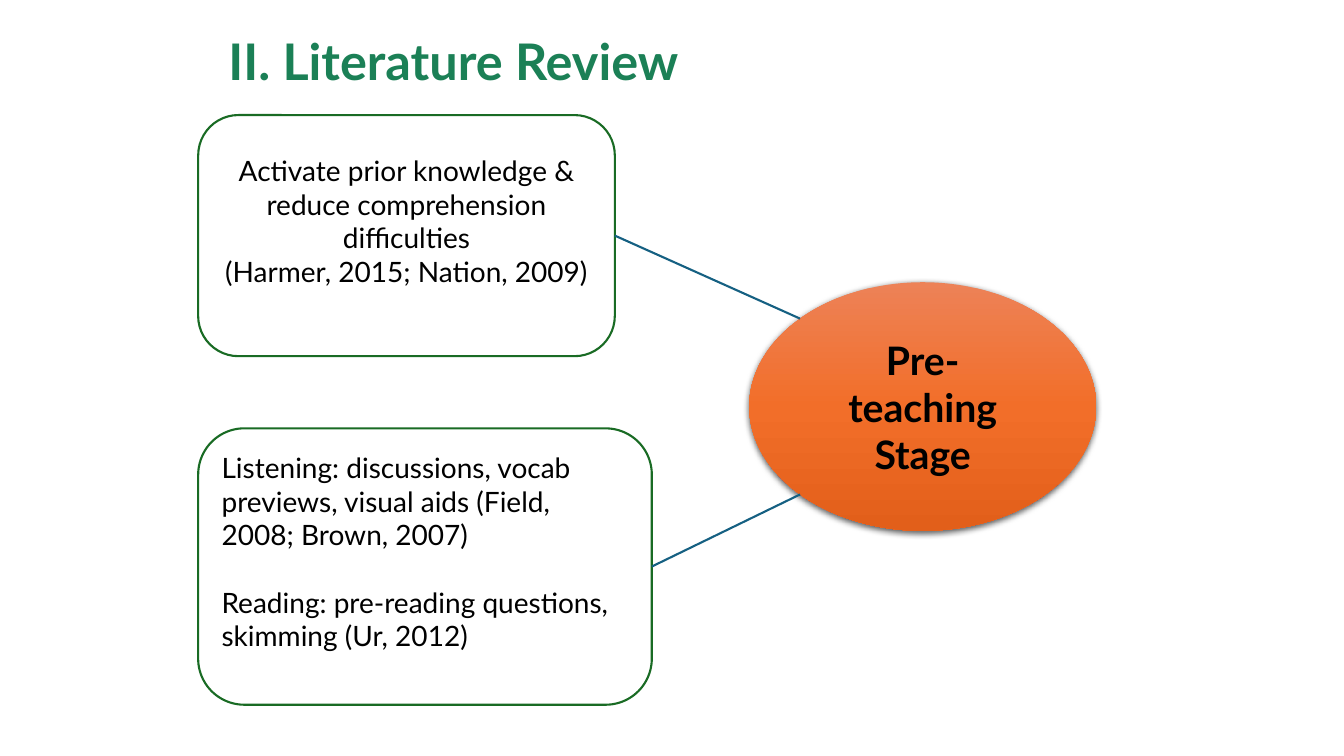
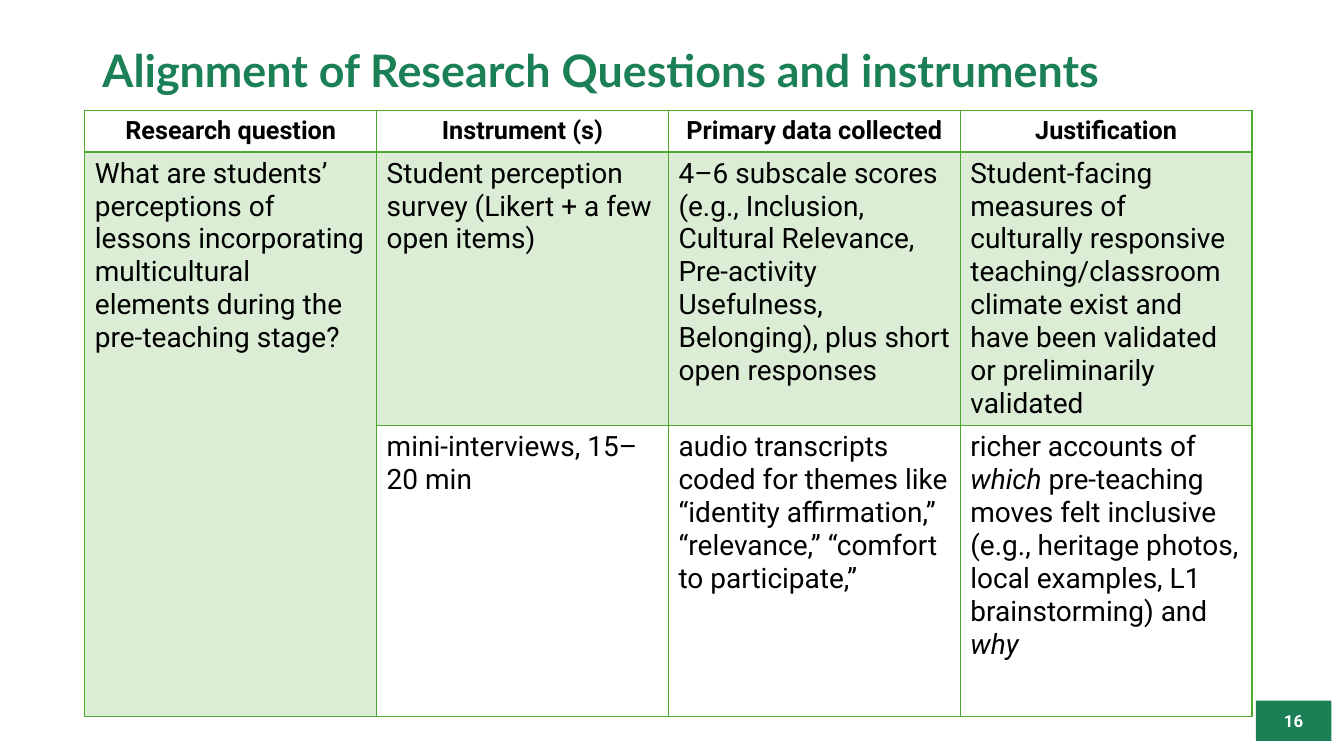
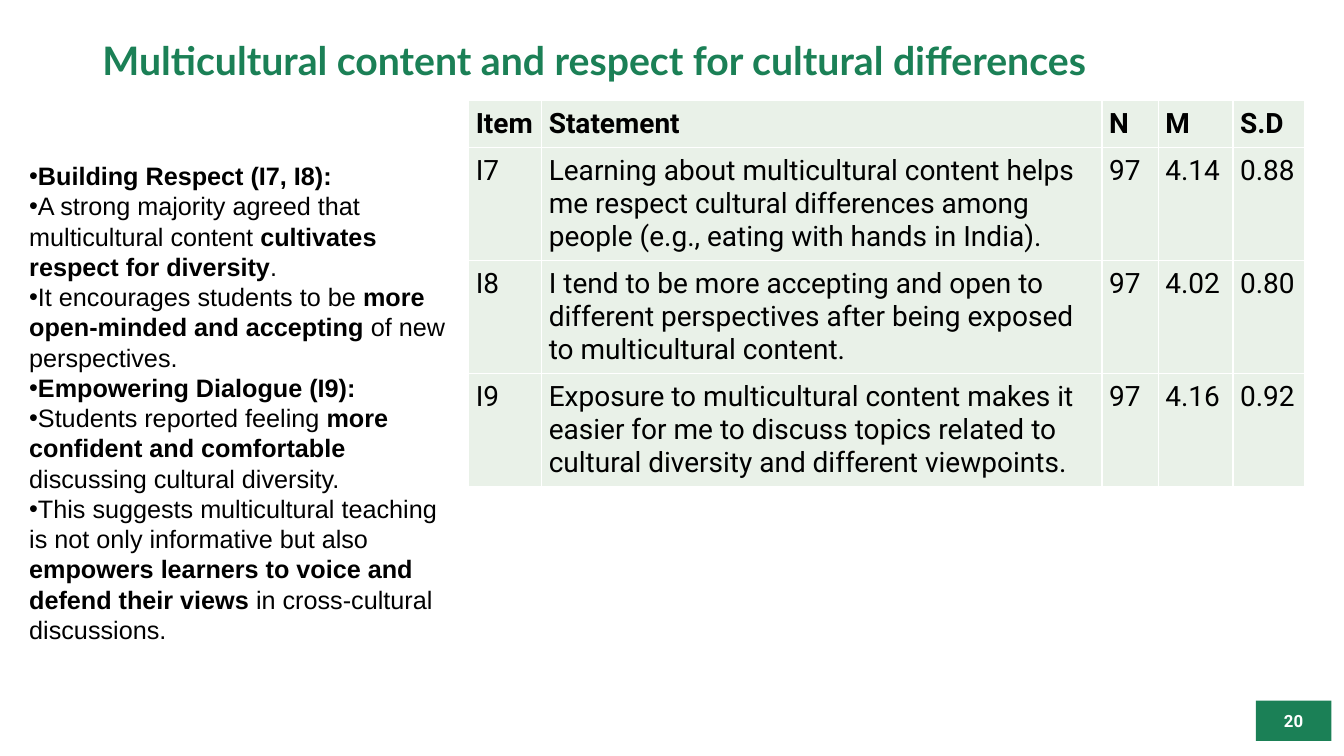
from copy import deepcopy
from math import sqrt

from lxml.etree import SubElement
from pptx import Presentation
from pptx.dml.color import RGBColor
from pptx.enum.shapes import MSO_CONNECTOR, MSO_SHAPE
from pptx.enum.text import MSO_ANCHOR, MSO_AUTO_SIZE, PP_ALIGN
from pptx.oxml.ns import qn
from pptx.util import Emu, Inches, Pt

GREEN = RGBColor(0x1B, 0x80, 0x56)
OUTLINE = RGBColor(0x19, 0x6B, 0x24)
LINK = RGBColor(0x15, 0x60, 0x82)
GRID_GREEN = RGBColor(0x4E, 0xA7, 0x2E)
LIGHT_GREEN = RGBColor(0xDC, 0xED, 0xD5)
PALE = RGBColor(0xE9, 0xF1, 0xE8)
BLACK = RGBColor(0, 0, 0)
WHITE = RGBColor(0xFF, 0xFF, 0xFF)
STAGE_STOPS = [(0, RGBColor(0xED, 0x82, 0x57)),
               (0.5, RGBColor(0xF2, 0x6E, 0x29)),
               (1, RGBColor(0xE2, 0x5F, 0x1A))]

SLIDE_W, SLIDE_H = Inches(13.333), Inches(7.5)
COL, ROW = SLIDE_W / 160, SLIDE_H / 90

TITLE = {"name": "Lato", "bold": True, "color": GREEN}
NOTE = {"name": "Lato", "size": Pt(20), "color": BLACK}
STAGE = {"name": "Lato", "size": Pt(28), "bold": True, "color": BLACK}
NUMBER = {"name": "Roboto", "size": Pt(12), "bold": True, "color": WHITE}
CELL = {"name": "Roboto", "size": Pt(20), "bold": False, "color": BLACK}
FINDING = {"name": "Arial", "size": Pt(18), "bold": False, "color": BLACK}

ALIGNMENT_ROWS = [
    ["Research question", "Instrument (s)", "Primary data collected",
     "Justification"],
    ["What are students’ perceptions of lessons incorporating multicultural "
     "elements during the pre-teaching stage?",
     "Student perception survey (Likert + a few open items)",
     "4–6 subscale scores (e.g., Inclusion, Cultural Relevance, Pre-activity "
     "Usefulness, Belonging), plus short open responses",
     "Student-facing measures of culturally responsive teaching/classroom "
     "climate exist and have been validated or preliminarily validated"],
    ["", "mini-interviews, 15–20 min",
     "audio transcripts coded for themes like “identity affirmation,” "
     "“relevance,” “comfort to participate,”",
     "richer accounts of |which| pre-teaching moves felt inclusive (e.g., "
     "heritage photos, local examples, L1 brainstorming) and |why|"],
]
ITEM_ROWS = [
    ["Item", "Statement", "N", "M", "S.D"],
    ["I7", "Learning about multicultural content helps me respect cultural "
     "differences among people (e.g., eating with hands in India).",
     "97", "4.14", "0.88"],
    ["I8", "I tend to be more accepting and open to different perspectives "
     "after being exposed to multicultural content.", "97", "4.02", "0.80"],
    ["I9", "Exposure to multicultural content makes it easier for me to "
     "discuss topics related to cultural diversity and different viewpoints.",
     "97", "4.16", "0.92"],
]
FINDINGS = [
    "|Building Respect (I7, I8):|",
    "A strong majority agreed that multicultural content |cultivates respect "
    "for diversity|.",
    "It encourages students to be |more open-minded and accepting| of new "
    "perspectives.",
    "|Empowering Dialogue (I9):|",
    "Students reported feeling |more confident and comfortable| discussing "
    "cultural diversity.",
    "This suggests multicultural teaching is not only informative but also "
    "|empowers learners to voice and defend their views| in cross-cultural "
    "discussions.",
]


def at(left, top, width, height):
    """Turn grid columns and rows into slide lengths."""
    return [Emu(round(n * unit))
            for n, unit in zip((left, top, width, height), (COL, ROW) * 2)]


def format_font(font, fmt):
    for key, value in fmt.items():
        if key == "color":
            font.color.rgb = value
        else:
            setattr(font, key, value)


def add_bullet(p):
    pPr = p._p.get_or_add_pPr()
    pPr.set("marL", "0")
    pPr.set("indent", "0")
    SubElement(pPr, qn("a:buFont")).set("typeface", "Arial")
    SubElement(pPr, qn("a:buChar")).set("char", "•")


def write(tf, lines, fmt, align=PP_ALIGN.LEFT, emphasis="bold", gap=None,
          bullets=False):
    """Write one paragraph a line; text between bars takes the emphasis."""
    for i, line in enumerate(lines):
        p = tf.add_paragraph() if i else tf.paragraphs[0]
        p.alignment = align
        if gap and i:
            p.space_before = gap
        if bullets:
            add_bullet(p)
        for j, part in enumerate(line.split("|")):
            if part:
                r = p.add_run()
                r.text = part
                format_font(r.font, {**fmt, emphasis: True} if j % 2 else fmt)


def set_frame(tf, **settings):
    settings = {"word_wrap": True, "auto_size": MSO_AUTO_SIZE.NONE,
                "vertical_anchor": MSO_ANCHOR.MIDDLE, **settings}
    for key, value in settings.items():
        setattr(tf, key, value)


def add_slide(prs, title, size, place, number=None):
    s = prs.slides.add_slide(prs.slide_layouts[5])
    sp = s.shapes.title
    sp.left, sp.top, sp.width, sp.height = at(*place)
    set_frame(sp.text_frame)
    write(sp.text_frame, [title], {**TITLE, "size": size}, PP_ALIGN.JUSTIFY)
    sp.text_frame.paragraphs[0].line_spacing = 0.9
    if number:
        badge = add_box(s, MSO_SHAPE.RECTANGLE, (149.5, 83.4, 9, 4.8), GREEN)
        write(badge.text_frame, [number], NUMBER, PP_ALIGN.CENTER)
    return s


def add_box(s, kind, place, fill, outline=None, **frame):
    sp = s.shapes.add_shape(kind, *at(*place))
    sp.shadow.inherit = False
    sp.fill.solid()
    sp.fill.fore_color.rgb = fill
    if outline:
        sp.line.color.rgb = outline
        sp.line.width = Pt(1.5)
    else:
        sp.line.fill.background()
    set_frame(sp.text_frame, **frame)
    return sp


def add_note(s, place, lines, **style):
    sp = add_box(s, MSO_SHAPE.ROUNDED_RECTANGLE, place, WHITE, OUTLINE,
                 margin_bottom=Pt(25))
    write(sp.text_frame, lines, NOTE, **style)
    return sp


def add_stage(s, place, text):
    """Add an ellipse with a three-stop gradient and a soft shadow below."""
    sp = add_box(s, MSO_SHAPE.OVAL, place, WHITE,
                 margin_left=Inches(0.2), margin_right=Inches(0.2))
    sp.fill.gradient()
    sp.fill.gradient_angle = 270
    spPr = sp._element.spPr
    stops = spPr.find(".//" + qn("a:gsLst"))
    stops.insert(1, deepcopy(stops[0]))
    for stop, (position, color) in zip(sp.fill.gradient_stops, STAGE_STOPS):
        stop.position = position
        stop.color.rgb = color
    shadow = SubElement(spPr.find(qn("a:effectLst")), qn("a:outerShdw"),
                        blurRad=str(Pt(4.5)), dist=str(Pt(1.5)),
                        dir="5400000", algn="ctr", rotWithShape="0")
    color = SubElement(shadow, qn("a:srgbClr"), val="000000")
    SubElement(color, qn("a:alpha"), val="63000")
    write(sp.text_frame, [text], STAGE, PP_ALIGN.CENTER)
    return sp


def link_to_stage(s, note, stage, side):
    """Join a note to the ellipse's upper (-1) or lower (1) left diagonal."""
    x = stage.left + stage.width / 2 * (1 - 1 / sqrt(2))
    y = stage.top + stage.height / 2 * (1 + side / sqrt(2))
    line = s.shapes.add_connector(MSO_CONNECTOR.STRAIGHT, 0, 0,
                                  Emu(round(x)), Emu(round(y)))
    line.begin_connect(note, 3)
    line.line.color.rgb = LINK
    line.line.width = Pt(1.5)
    SubElement(line._element.spPr, qn("a:effectLst"))


def set_borders(cell, color, widths):
    """Draw the left, right, top and bottom borders of a cell."""
    tcPr = cell._tc.get_or_add_tcPr()
    for side, width in zip("LRTB", widths):
        ln = SubElement(tcPr, qn("a:ln" + side), w=str(Pt(width)))
        fill = SubElement(ln, qn("a:solidFill"))
        SubElement(fill, qn("a:srgbClr"), val=str(color))


def add_table(s, corner, cols, rows, texts, fills, border, header,
              header_align=PP_ALIGN.LEFT, rule=1, margin=None):
    """Add a table; fills gives a colour per row, rule the header's line."""
    place = at(*corner, sum(cols), sum(rows))
    table = s.shapes.add_table(len(rows), len(cols), *place).table
    table.first_row = table.horz_banding = False
    for column, width in zip(table.columns, cols):
        column.width = Emu(round(width * COL))
    for i, (row, height) in enumerate(zip(table.rows, rows)):
        row.height = Emu(round(height * ROW))
        for cell, text in zip(row.cells, texts[i]):
            set_borders(cell, border, (1, 1, rule if i == 1 else 1,
                                       1 if i else rule))
            cell.fill.solid()
            cell.fill.fore_color.rgb = fills[i]
            if margin:
                for side in ("left", "right", "top", "bottom"):
                    setattr(cell, "margin_" + side, margin)
            write(cell.text_frame, [text], CELL if i else header,
                  PP_ALIGN.LEFT if i else header_align, emphasis="italic")
    return table


def build_review(prs):
    s = add_slide(prs, "II. Literature Review", Pt(36), (26, 0.2, 108, 15))
    stage = add_stage(s, (89.2, 33.6, 41.3, 29.6), "Pre-teaching Stage")
    purpose = add_note(
        s, (23.6, 13.7, 49.6, 28.7),
        ["Activate prior knowledge & reduce comprehension difficulties",
         "(Harmer, 2015; Nation, 2009)"], align=PP_ALIGN.CENTER)
    skills = add_note(
        s, (23.6, 51, 54, 32.9),
        ["Listening: discussions, vocab previews, visual aids (Field, 2008; "
         "Brown, 2007)",
         "Reading: pre-reading questions, skimming (Ur, 2012)"], gap=Pt(24))
    link_to_stage(s, purpose, stage, -1)
    link_to_stage(s, skills, stage, 1)


def build_alignment(prs):
    s = add_slide(prs, "Alignment of Research Questions and instruments",
                  Pt(32), (11, 0, 149, 17.4), "16")
    table = add_table(s, (10.1, 13.2), [34.74] * 4, [4.9, 32.5, 34.6],
                      ALIGNMENT_ROWS, [WHITE, LIGHT_GREEN, WHITE], GRID_GREEN,
                      {**CELL, "size": Pt(18), "bold": True},
                      PP_ALIGN.CENTER, rule=2)
    table.cell(1, 0).merge(table.cell(2, 0))


def build_respect(prs):
    s = add_slide(
        prs, "Multicultural content and respect for cultural differences",
        Pt(28), (11, 3.2, 138, 8.6), "20")
    add_table(s, (55.8, 12), [8.7, 66.7, 6.7, 8.9, 8.5], [5.6] + [13.4] * 3,
              ITEM_ROWS, [PALE] * 4, WHITE, {**CELL, "bold": True},
              margin=Inches(0.07))
    findings = s.shapes.add_textbox(*at(2.3, 18.2, 52.3, 63))
    set_frame(findings.text_frame, margin_bottom=Pt(25))
    write(findings.text_frame, FINDINGS, FINDING, bullets=True)


def main():
    prs = Presentation()
    prs.slide_width, prs.slide_height = SLIDE_W, SLIDE_H
    build_review(prs)
    build_alignment(prs)
    build_respect(prs)
    prs.save("out.pptx")


if __name__ == "__main__":
    main()
